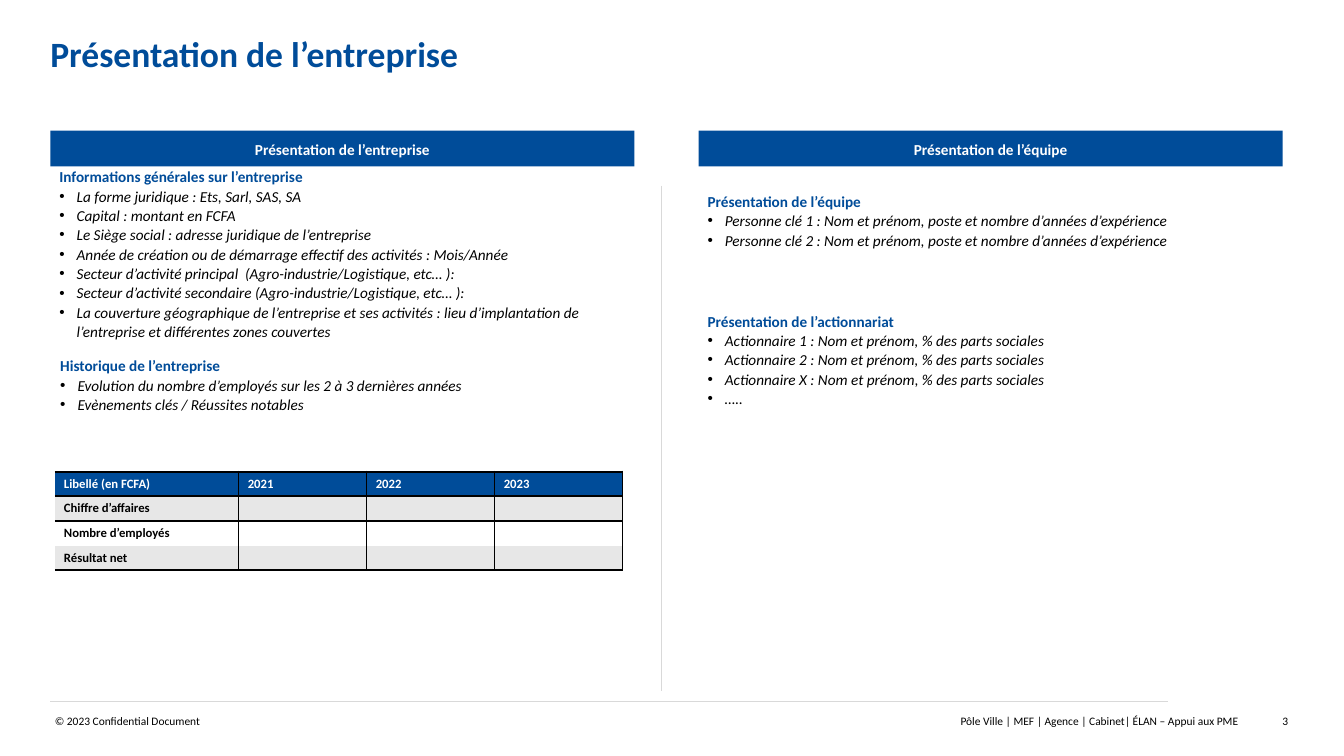
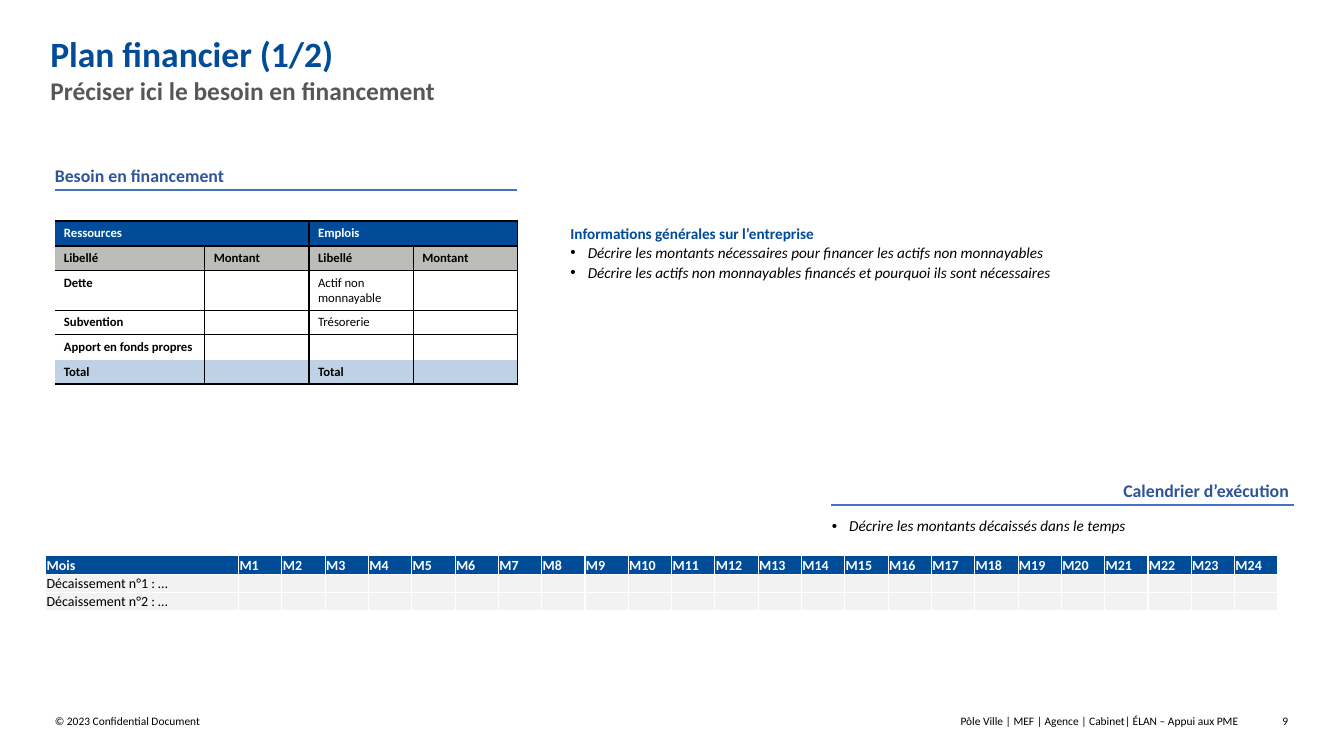
import pptx
import pptx.dml.color
import pptx.enum.shapes
import pptx.enum.text
import pptx.oxml.ns
import pptx.util
from lxml import etree

Inches = pptx.util.Inches
Pt = pptx.util.Pt
RGBColor = pptx.dml.color.RGBColor
Align = pptx.enum.text.PP_ALIGN
Anchor = pptx.enum.text.MSO_ANCHOR
qn = pptx.oxml.ns.qn

FONT = "Calibri"
NAVY = RGBColor(0x00, 0x4C, 0x99)
PALE_NAVY = RGBColor(0xBF, 0xD2, 0xE5)
HEADING_BLUE = RGBColor(0x2F, 0x55, 0x97)
RULE_BLUE = RGBColor(0x44, 0x72, 0xC4)
BLACK = RGBColor(0x00, 0x00, 0x00)
WHITE = RGBColor(0xFF, 0xFF, 0xFF)
DARK_GREY = RGBColor(0x57, 0x57, 0x57)
WARM_GREY = RGBColor(0xBC, 0xBC, 0xB9)
RULE_GREY = RGBColor(0xD9, 0xD9, 0xD9)
BAND_GREY = RGBColor(0xE7, 0xE7, 0xE7)
LIGHT_GREY = RGBColor(0xF2, 0xF2, 0xF2)

LEFT = 0.55
PLAIN_STYLE = "{2D5ABB26-0587-4C30-8999-92F81FD0307C}"
ROW = 0.27


def write(frame, text, size=12, color=BLACK, bold=False, italic=False,
          align=Align.LEFT, spacing=None, bullet=False):
    """Write a paragraph, using the empty first one when there is one."""
    para = frame.paragraphs[0]
    if para.runs:
        para = frame.add_paragraph()
    para.alignment = align
    if spacing:
        para.line_spacing = spacing
    if bullet:
        properties = para._p.get_or_add_pPr()
        properties.set("marL", str(Inches(0.19)))
        properties.set("indent", str(-Inches(0.19)))
        etree.SubElement(properties, qn("a:buFont")).set("typeface", "Arial")
        etree.SubElement(properties, qn("a:buChar")).set("char", "•")
    if not text:
        end = etree.SubElement(para._p, qn("a:endParaRPr"))
        end.set("sz", str(size * 100))
        return
    span = para.add_run()
    span.text = text
    font = span.font
    font.name, font.size = FONT, Pt(size)
    font.bold, font.italic = bold, italic
    font.color.rgb = color


def set_insets(frame, left=0, top=0, right=0, bottom=0):
    frame.margin_left, frame.margin_right = Inches(left), Inches(right)
    frame.margin_top, frame.margin_bottom = Inches(top), Inches(bottom)


def add_text_frame(page, left, top, width, height, anchor=Anchor.TOP, side=0):
    box = page.shapes.add_textbox(Inches(left), Inches(top),
                                  Inches(width), Inches(height))
    frame = box.text_frame
    frame.word_wrap = True
    frame.vertical_anchor = anchor
    set_insets(frame, left=side, right=side)
    return frame


def add_rule(page, start, end, color, weight):
    line = page.shapes.add_connector(
        pptx.enum.shapes.MSO_CONNECTOR.STRAIGHT,
        *(Inches(value) for value in (*start, *end)))
    line.line.color.rgb = color
    line.line.width = Pt(weight)
    etree.SubElement(line._element.spPr, qn("a:effectLst"))


def add_band(page, left, top, width, text):
    band = page.shapes.add_shape(
        pptx.enum.shapes.MSO_SHAPE.RECTANGLE,
        Inches(left), Inches(top), Inches(width), Inches(0.39))
    band.shadow.inherit = False
    band.fill.solid()
    band.fill.fore_color.rgb = NAVY
    band.line.fill.background()
    frame = band.text_frame
    frame.word_wrap = True
    frame.vertical_anchor = Anchor.MIDDLE
    set_insets(frame, 0.04, 0.08, 0.04, 0.08)
    write(frame, text, color=WHITE, bold=True, align=Align.CENTER, spacing=1.06)


def add_bullets(page, left, top, width, height, items, heading=None):
    frame = add_text_frame(page, left, top, width, height, side=0.1)
    if heading:
        write(frame, heading, color=NAVY, bold=True, spacing=1.06)
    for item in items:
        write(frame, item, italic=True, spacing=1.06, bullet=True)


def add_section_heading(page, left, top, text, align=Align.LEFT):
    """Place a blue heading above its underline."""
    width = 5.06
    frame = add_text_frame(page, left, top, width, 0.24, Anchor.BOTTOM)
    set_insets(frame, right=0.05)
    write(frame, text, size=14, color=HEADING_BLUE, bold=True, align=align)
    add_rule(page, (left, top + 0.28), (left + width, top + 0.28), RULE_BLUE, 1.5)


def set_borders(cell, color, weights):
    """Draw cell edges; weights are in points, keyed L, R, T, B."""
    properties = cell._tc.get_or_add_tcPr()
    for side in "LRTB":
        if weights[side]:
            edge = etree.SubElement(properties, qn(f"a:ln{side}"))
            edge.set("w", str(Pt(weights[side])))
            fill = etree.SubElement(edge, qn("a:solidFill"))
            etree.SubElement(fill, qn("a:srgbClr")).set("val", str(color))


def add_grid(page, left, top, widths, heights, rows, fills, rules,
             rule_color=BLACK, size=10, regular=(), insets=None,
             anchor=Anchor.TOP):
    """Add a table; rules holds the weight of each horizontal line."""
    shape = page.shapes.add_table(
        len(rows), len(widths), Inches(left), Inches(top),
        Inches(sum(widths)), Inches(sum(heights)))
    table = shape.table
    table.first_row = table.horz_banding = False
    table._tbl.tblPr.find(qn("a:tableStyleId")).text = PLAIN_STYLE
    for column, width in zip(table.columns, widths):
        column.width = Inches(width)
    for row_index, (height, texts) in enumerate(zip(heights, rows)):
        table.rows[row_index].height = Inches(height)
        for column_index, text in enumerate(texts):
            cell = table.cell(row_index, column_index)
            set_borders(cell, rule_color, {
                "L": 1 if column_index else 0, "R": 1,
                "T": rules[row_index], "B": rules[row_index + 1]})
            cell.fill.solid()
            cell.fill.fore_color.rgb = fills[row_index]
            cell.vertical_anchor = anchor
            if insets:
                set_insets(cell, *insets)
            write(cell.text_frame, text, size=size, bold=text not in regular,
                  color=BLACK if row_index else WHITE)
    return table


def add_page(deck, title, number):
    """Add a slide with the shared title and footer."""
    page = deck.slides.add_slide(deck.slide_layouts[5])
    holder = page.shapes.title
    holder.left, holder.top = Inches(LEFT), Inches(0.35)
    holder.width, holder.height = Inches(12.21), Inches(0.47)
    frame = holder.text_frame
    frame.auto_size = pptx.enum.text.MSO_AUTO_SIZE.NONE
    frame.vertical_anchor = Anchor.TOP
    set_insets(frame)
    write(frame, title, size=28, color=NAVY, bold=True)
    footers = (
        (0.6, 6.46, "© 2023 Confidential Document", Align.LEFT),
        (7.64, 5.9, "Pôle Ville | MEF | Agence | Cabinet| ÉLAN – Appui aux PME",
         Align.RIGHT),
        (13.72, 0.37, str(number), Align.RIGHT))
    for left, width, text, align in footers:
        write(add_text_frame(page, left, 7.81, width, 0.15), text,
              size=9, align=align)
    return page


def add_company_column(page, left, width):
    add_band(page, left, 1.43, width, "Présentation de l’entreprise")
    add_bullets(page, left, 1.82, width, 1.68, (
        "La forme juridique : Ets, Sarl, SAS, SA",
        "Capital : montant en FCFA",
        "Le Siège social : adresse juridique de l’entreprise",
        "Année de création ou de démarrage effectif des activités : Mois/Année",
        "Secteur d’activité principal  (Agro-industrie/Logistique, etc… ):",
        "Secteur d’activité secondaire (Agro-industrie/Logistique, etc… ):",
        "La couverture géographique de l’entreprise et ses activités : lieu "
        "d’implantation de l’entreprise et différentes zones couvertes",
    ), heading="Informations générales sur l’entreprise")
    add_bullets(page, left + 0.01, 3.89, width, 1.2, (
        "Evolution du nombre d’employés sur les 2 à 3 dernières années",
        "Evènements clés / Réussites notables",
    ), heading="Historique de l’entreprise")
    labels = ("Chiffre d’affaires", "Nombre d’employés", "Résultat net")
    add_grid(page, left + 0.05, 5.16, [2.01] + [1.4] * 3, [ROW] * 4,
             [("Libellé (en FCFA)", "2021", "2022", "2023")]
             + [(label, "", "", "") for label in labels],
             fills=(NAVY, BAND_GREY, WHITE, BAND_GREY), rules=(2, 2, 0, 0, 2))


def add_team_column(page, left, width):
    add_band(page, left, 1.43, width, "Présentation de l’équipe")
    add_bullets(page, left, 2.09, width, 1.03, [
        f"Personne clé {number} : Nom et prénom, poste et nombre d’années "
        "d’expérience" for number in (1, 2)
    ], heading="Présentation de l’équipe")
    add_bullets(page, left, 3.4, width, 1.47, [
        f"Actionnaire {number} : Nom et prénom, % des parts sociales"
        for number in "12X"
    ] + ["….."], heading="Présentation de l’actionnariat")


def add_company_slide(deck):
    page = add_page(deck, "Présentation de l’entreprise", 3)
    add_rule(page, (LEFT, 7.67), (12.78, 7.67), RULE_GREY, 0.75)
    add_rule(page, (7.23, 2.03), (7.23, 7.56), RULE_GREY, 0.75)
    add_company_column(page, LEFT, 6.39)
    add_team_column(page, 7.64, 6.39)


def add_funding_need(page, left, top):
    add_section_heading(page, left, top, "Besoin en financement")
    table = add_grid(
        page, left, top + 0.62, [1.64] + [1.14] * 3,
        [ROW, ROW, 0.43, ROW, ROW, ROW],
        [("Ressources", "", "Emplois", ""),
         ("Libellé", "Montant", "Libellé", "Montant"),
         ("Dette", "", "Actif non monnayable", ""),
         ("Subvention", "", "Trésorerie", ""),
         ("Apport en fonds propres", "", "", ""),
         ("Total", "", "Total", "")],
        fills=(NAVY, WARM_GREY, WHITE, WHITE, WHITE, PALE_NAVY),
        rules=(2, 2, 1, 1, 0, 0, 2),
        regular=("Actif non monnayable", "Trésorerie"))
    for column in (0, 2):
        table.cell(0, column).merge(table.cell(0, column + 1))
    add_bullets(page, left + 5.54, top + 0.64, 6.39, 1.47, (
        "Décrire les montants nécessaires pour financer les actifs non "
        "monnayables",
        "Décrire les actifs non monnayables financés et pourquoi ils sont "
        "nécessaires",
    ), heading="Informations générales sur l’entreprise")


def add_schedule(page, left, top):
    add_section_heading(page, left + 8.59, top, "Calendrier d’exécution",
                        align=Align.RIGHT)
    add_bullets(page, left + 8.5, top + 0.4, 5.15, 0.38,
                ["Décrire les montants décaissés dans le temps"])
    months = [f"M{month}" for month in range(1, 25)]
    payments = [f"Décaissement n°{number} : …" for number in (1, 2)]
    add_grid(page, left, top + 0.84, [2.11] + [0.474] * len(months), [0.2] * 3,
             [["Mois"] + months]
             + [[payment] + [""] * len(months) for payment in payments],
             fills=(NAVY, LIGHT_GREY, LIGHT_GREY), rules=(1, 1, 1, 1),
             rule_color=WHITE, size=11, regular=payments,
             insets=(0.01, 0.01, 0.01, 0), anchor=Anchor.BOTTOM)


def add_finance_slide(deck):
    page = add_page(deck, "Plan financier (1/2)", 9)
    write(add_text_frame(page, LEFT, 0.82, 13.6, 0.75),
          "Préciser ici le besoin en financement",
          size=20, color=DARK_GREY, bold=True)
    add_funding_need(page, 0.6, 1.8)
    add_schedule(page, 0.5, 5.24)


def main():
    deck = pptx.Presentation()
    deck.slide_width, deck.slide_height = Inches(14.7), Inches(8.27)
    add_company_slide(deck)
    add_finance_slide(deck)
    deck.save("out.pptx")


if __name__ == "__main__":
    main()
